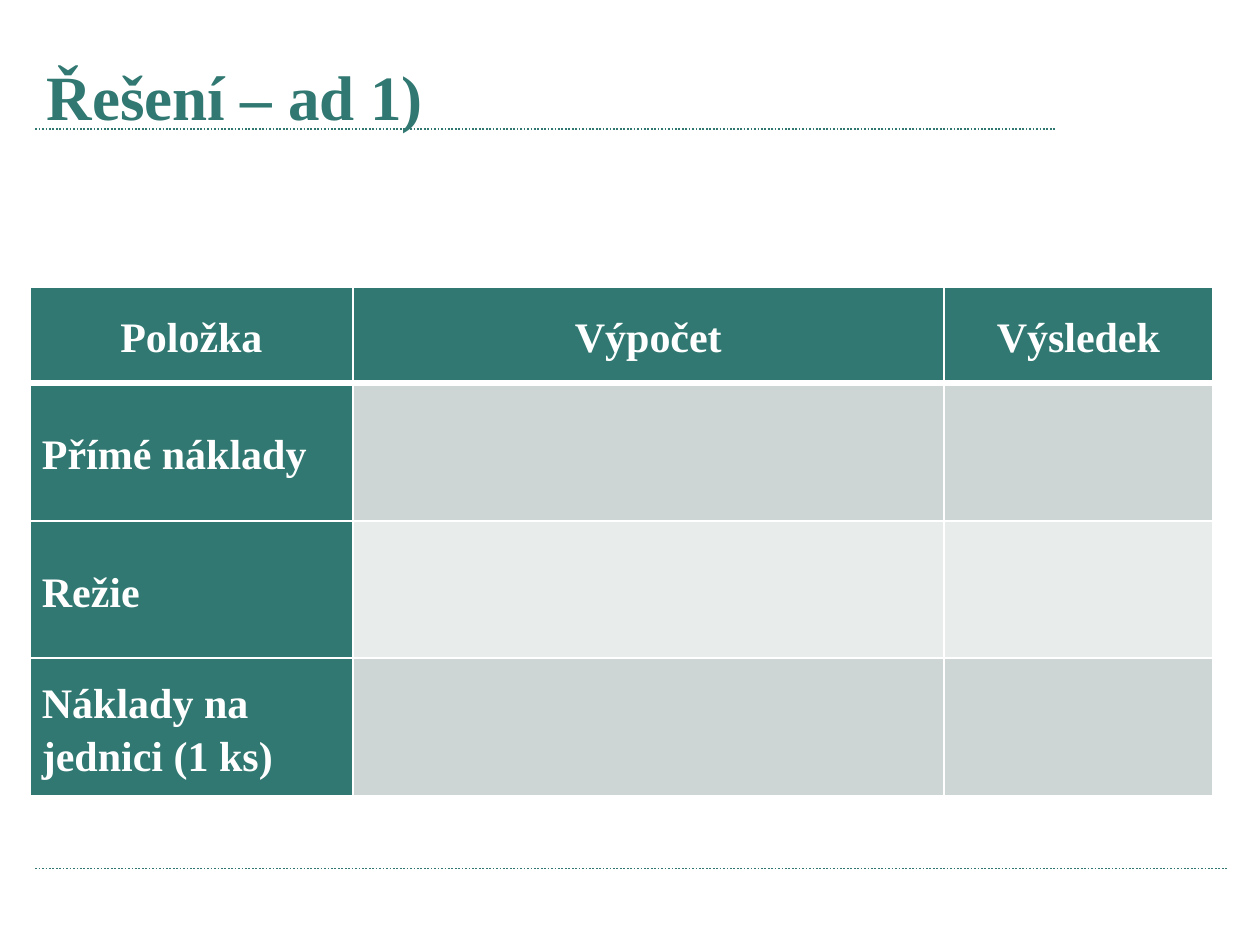
from lxml import etree
from pptx import Presentation
from pptx.dml.color import RGBColor
from pptx.enum.dml import MSO_LINE
from pptx.enum.shapes import MSO_CONNECTOR
from pptx.enum.text import MSO_ANCHOR, PP_ALIGN
from pptx.oxml.ns import qn
from pptx.util import Inches, Pt

COLORS = {"teal": "307871", "white": "FFFFFF", "dark_band": "CDD6D5", "light_band": "E8ECEB"}


def write(tf, text, size, color, align=PP_ALIGN.LEFT, spacing=1.0):
    p = tf.paragraphs[0]
    p.alignment = align
    p.line_spacing = spacing
    r = p.add_run()
    r.text = text
    r.font.name = "Times New Roman"
    r.font.size = Pt(size)
    r.font.bold = True
    r.font.color.rgb = RGBColor.from_string(COLORS[color])


def add_border(cell, side, width):
    ln = etree.SubElement(cell._tc.get_or_add_tcPr(), qn(f"a:{side}"), w=str(Pt(width)))
    fill = etree.SubElement(ln, qn("a:solidFill"))
    etree.SubElement(fill, qn("a:srgbClr"), val=COLORS["white"])


prs = Presentation()
prs.slide_width = Inches(7.5)
prs.slide_height = prs.slide_width * 3 // 4
s = prs.slides.add_slide(prs.slide_layouts[6])

for right, y in [(6.29, 0.77), (7.31, 5.17)]:
    rule = s.shapes.add_connector(MSO_CONNECTOR.STRAIGHT, Inches(0.21), Inches(y), Inches(right), Inches(y))
    rule.line.color.rgb = RGBColor.from_string(COLORS["teal"])
    rule.line.width = Pt(0.75)
    rule.line.dash_style = MSO_LINE.ROUND_DOT
    etree.SubElement(rule._element.spPr, qn("a:effectLst"))

title = s.shapes.add_textbox(Inches(0.18), Inches(0.27), Inches(6.61), Inches(0.59))
tf = title.text_frame
tf.word_wrap = True
tf.vertical_anchor = MSO_ANCHOR.MIDDLE
write(tf, "Řešení – ad 1)", 27, "teal")

rows = [
    ["Položka", "Výpočet", "Výsledek"],
    ["Přímé náklady", "", ""],
    ["Režie", "", ""],
    ["Náklady na jednici (1 ks)", "", ""],
]
widths = [1.92, 3.52, 1.6]
heights = [0.57] + [0.82] * 3
table = s.shapes.add_table(len(rows), len(widths), Inches(0.18), Inches(1.71),
                           Inches(sum(widths)), Inches(sum(heights))).table
for column, width in zip(table.columns, widths):
    column.width = Inches(width)

for i, (labels, height) in enumerate(zip(rows, heights)):
    table.rows[i].height = Inches(height)
    for j, label in enumerate(labels):
        cell = table.cell(i, j)
        cell.vertical_anchor = MSO_ANCHOR.MIDDLE
        cell.margin_left = cell.margin_right = Inches(0.07)
        cell.margin_top = cell.margin_bottom = 0
        for side in ("lnL", "lnR", "lnT", "lnB"):
            under_header = (i, side) in [(0, "lnB"), (1, "lnT")]
            add_border(cell, side, 3 if under_header else 1)
        band = "dark_band" if i % 2 else "light_band"
        cell.fill.solid()
        cell.fill.fore_color.rgb = RGBColor.from_string(COLORS["teal" if i == 0 or j == 0 else band])
        if label:
            align = PP_ALIGN.CENTER if i == 0 else PP_ALIGN.LEFT
            write(cell.text_frame, label, 18, "white", align=align, spacing=1.15)

prs.save("out.pptx")
